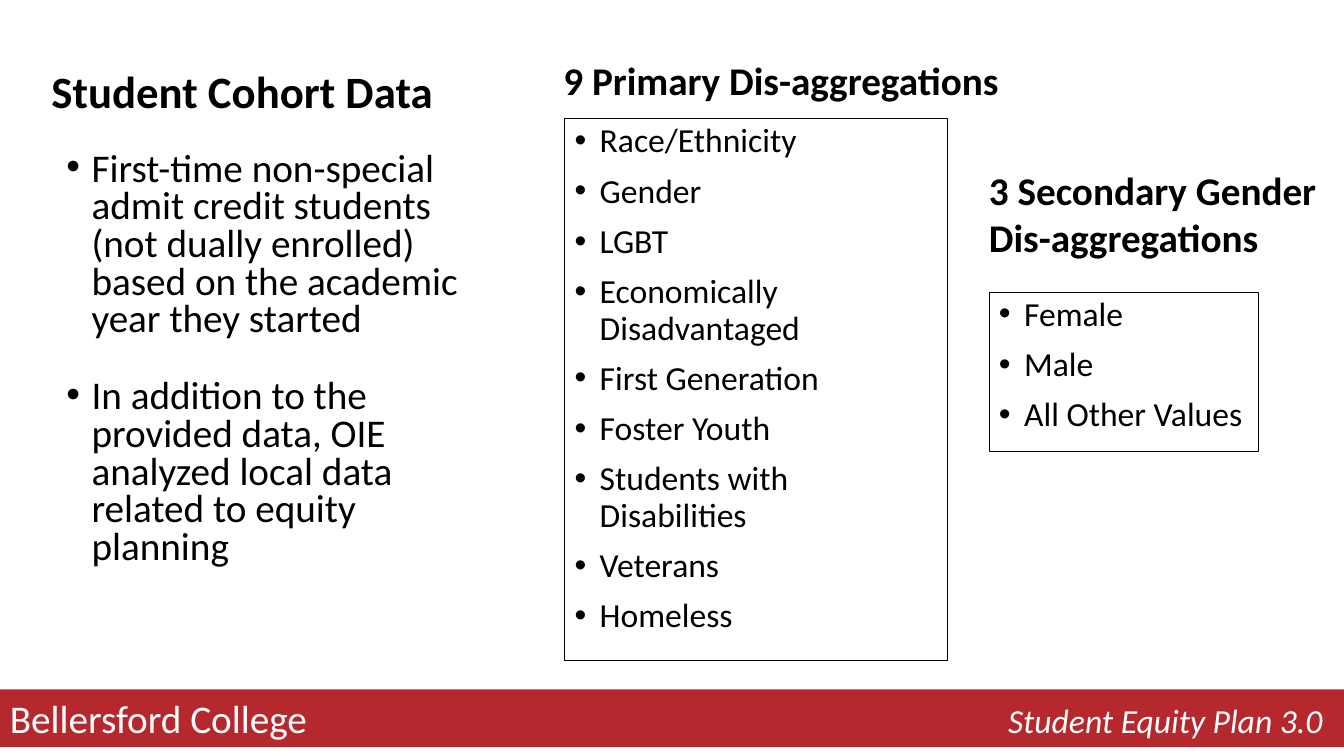
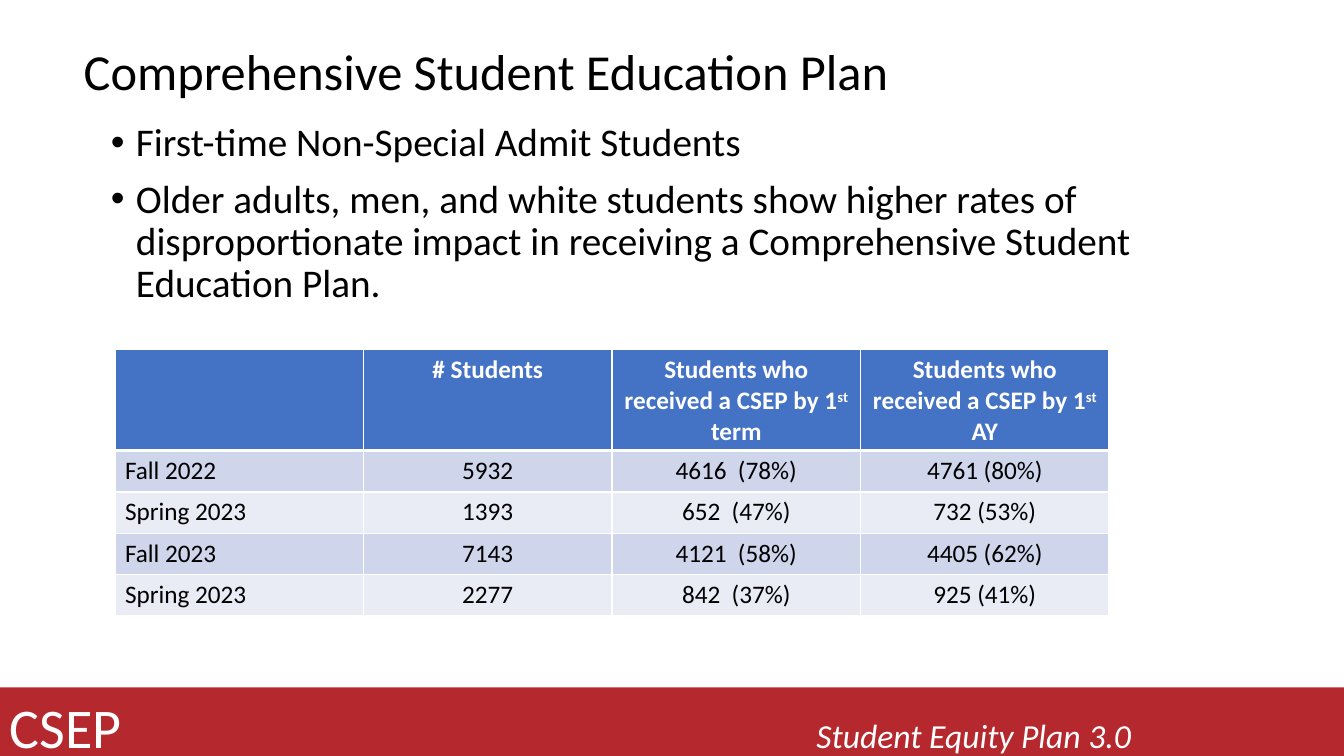
from lxml.etree import SubElement
from pptx import Presentation
from pptx.dml.color import RGBColor
from pptx.enum.shapes import MSO_SHAPE as Shape
from pptx.enum.text import MSO_ANCHOR as Anchor, MSO_AUTO_SIZE as AutoSize, PP_ALIGN as Align
from pptx.oxml.ns import qn
from pptx.util import Inches, Pt

FONT = "Calibri"
BLACK = RGBColor(0x00, 0x00, 0x00)
WHITE = RGBColor(0xFF, 0xFF, 0xFF)
BAND_RED = RGBColor(0xB5, 0x29, 0x2E)
HEADER_BLUE = RGBColor(0x44, 0x72, 0xC4)
ROW_FILLS = (RGBColor(0xCF, 0xD5, 0xEA), RGBColor(0xE9, 0xEB, 0xF5))

SLIDE_WIDTH, SLIDE_HEIGHT = 13.33, 7.5
INSET = 0.1
TITLE_ONLY = 5
PLAN_NAME = "Student Equity Plan 3.0"

PRIMARY_GROUPS = (
    "Race/Ethnicity", "Gender", "LGBT", "Economically Disadvantaged",
    "First Generation", "Foster Youth", "Students with Disabilities",
    "Veterans", "Homeless",
)
SECONDARY_GROUPS = ("Female", "Male", "All Other Values")
COHORT_POINTS = (
    "First-time non-special admit credit students (not dually enrolled) "
    "based on the academic year they started",
    "In addition to the provided data, OIE analyzed local data related to "
    "equity planning",
)
PLAN_POINTS = (
    "First-time Non-Special Admit Students",
    "Older adults, men, and white students show higher rates of "
    "disproportionate impact in receiving a Comprehensive Student Education Plan.",
)
PLAN_HEADERS = (
    (),
    ("# Students",),
    ("Students who received a CSEP by 1", "st", " term"),
    ("Students who received a CSEP by 1", "st", " AY"),
)
PLAN_ROWS = (
    ("Fall 2022", "5932", "4616  (78%)", "4761 (80%)"),
    ("Spring 2023", "1393", "652  (47%)", "732 (53%)"),
    ("Fall 2023", "7143", "4121  (58%)", "4405 (62%)"),
    ("Spring 2023", "2277", "842  (37%)", "925 (41%)"),
)


def add_run(paragraph, text, size, color=BLACK, bold=False, italic=False):
    """Append one formatted run and return it."""
    run = paragraph.add_run()
    run.text = text
    font = run.font
    font.name, font.size, font.bold, font.italic = FONT, Pt(size), bold, italic
    font.color.rgb = color
    return run


def add_title(slide, box, text, size, bold=False, line_spacing=1.0):
    """Place and format the title placeholder."""
    title = slide.shapes.title
    title.left, title.top, title.width, title.height = map(Inches, box)
    frame = title.text_frame
    frame.auto_size = AutoSize.NONE
    frame.word_wrap = True
    frame.vertical_anchor = Anchor.MIDDLE
    paragraph = frame.paragraphs[0]
    paragraph.alignment = Align.LEFT
    paragraph.line_spacing = line_spacing
    add_run(paragraph, text, size, bold=bold)


def add_text_box(slide, box):
    """Add a wrapping text box and return its text frame."""
    frame = slide.shapes.add_textbox(*map(Inches, box)).text_frame
    frame.word_wrap = True
    return frame


def add_rectangle(slide, box):
    """Add a plain rectangle without shadow."""
    rectangle = slide.shapes.add_shape(Shape.RECTANGLE, *map(Inches, box))
    rectangle.shadow.inherit = False
    rectangle.text_frame.word_wrap = True
    return rectangle


def fill_bullets(frame, items, size, indent=0.25, line_spacing=0.9, gap=10):
    """Fill a text frame with bulleted paragraphs."""
    for index, item in enumerate(items):
        paragraph = frame.add_paragraph() if index else frame.paragraphs[0]
        paragraph.alignment = Align.LEFT
        paragraph.line_spacing = line_spacing
        paragraph.space_before = Pt(gap if index else 10)
        properties = paragraph._p.get_or_add_pPr()
        properties.set("marL", str(Inches(indent)))
        properties.set("indent", str(Inches(-0.25)))
        SubElement(properties, qn("a:buFont"), typeface="Arial")
        SubElement(properties, qn("a:buChar"), char="•")
        add_run(paragraph, item, size)


def add_boxed_list(slide, box, heading, heading_box, items):
    """Add a bold heading and an outlined bullet list."""
    frame = add_text_box(slide, heading_box)
    add_run(frame.paragraphs[0], heading, 28, bold=True)
    outline = add_rectangle(slide, box)
    outline.fill.background()
    outline.line.color.rgb = BLACK
    outline.line.width = Pt(0.75)
    outline.text_frame.vertical_anchor = Anchor.TOP
    fill_bullets(outline.text_frame, items, 24)


def add_footer(slide, top, height, label, label_size, plan_right):
    """Add the red band with a label and a right-aligned plan name."""
    band = add_rectangle(slide, (0, top, SLIDE_WIDTH, height))
    band.fill.solid()
    band.fill.fore_color.rgb = BAND_RED
    band.line.fill.background()
    band.text_frame.vertical_anchor = Anchor.MIDDLE
    paragraph = band.text_frame.paragraphs[0]
    paragraph.alignment = Align.LEFT
    tabs = SubElement(paragraph._p.get_or_add_pPr(), qn("a:tabLst"))
    SubElement(tabs, qn("a:tab"), pos=str(Inches(plan_right - INSET)), algn="r")
    add_run(paragraph, label + "\t", label_size, WHITE)
    add_run(paragraph, PLAN_NAME, 24, WHITE, italic=True)


def set_borders(cell, top, bottom):
    """Draw white cell borders, widths in points."""
    properties = cell._tc.get_or_add_tcPr()
    sides = (("a:lnL", 1), ("a:lnR", 1), ("a:lnT", top), ("a:lnB", bottom))
    for tag, width in sides:
        line = SubElement(properties, qn(tag), w=str(Pt(width)))
        SubElement(SubElement(line, qn("a:solidFill")), qn("a:srgbClr"), val=str(WHITE))


def format_cell(cell, fill, top=1, bottom=1, alignment=Align.CENTER):
    """Set a cell's borders and fill and return its paragraph."""
    set_borders(cell, top, bottom)
    cell.fill.solid()
    cell.fill.fore_color.rgb = fill
    paragraph = cell.text_frame.paragraphs[0]
    paragraph.alignment = alignment
    return paragraph


def add_plan_table(slide, left, top, width, header_height=1.0, row_height=0.41):
    """Add the table of students who received a plan."""
    height = header_height + row_height * len(PLAN_ROWS)
    table = slide.shapes.add_table(
        len(PLAN_ROWS) + 1, len(PLAN_HEADERS),
        *map(Inches, (left, top, width, height))).table
    for column in table.columns:
        column.width = Inches(width / len(PLAN_HEADERS))
    for index, row in enumerate(table.rows):
        row.height = Inches(row_height if index else header_height)
    for column, parts in enumerate(PLAN_HEADERS):
        paragraph = format_cell(table.cell(0, column), HEADER_BLUE, bottom=3)
        for part in parts:
            run = add_run(paragraph, part, 18, WHITE, bold=True)
            if part == "st":
                run.font._element.set("baseline", "30000")
    for row, values in enumerate(PLAN_ROWS, 1):
        for column, value in enumerate(values):
            paragraph = format_cell(
                table.cell(row, column), ROW_FILLS[(row - 1) % 2],
                top=3 if row == 1 else 1,
                alignment=Align.CENTER if column else Align.LEFT)
            add_run(paragraph, value, 18)


def build_cohort_slide(slide):
    """Build the slide on cohort data and its dis-aggregations."""
    add_title(slide, (0.41, 0.61, 4.89, 0.64), "Student Cohort Data", 32,
              bold=True, line_spacing=0.9)
    fill_bullets(add_text_box(slide, (0.56, 1.46, 4.23, 4.34)),
                 COHORT_POINTS, 28, line_spacing=0.8, gap=28)
    add_boxed_list(slide, (5.6, 1.18, 3.8, 5.37), "9 Primary Dis-aggregations",
                   (5.49, 0.51, 5.1, 0.57), PRIMARY_GROUPS)
    add_boxed_list(slide, (9.81, 2.9, 2.67, 1.58), "3 Secondary Gender Dis-aggregations",
                   (9.71, 1.6, 3.6, 1.04), SECONDARY_GROUPS)
    add_footer(slide, 6.84, 0.57, "Bellersford College", 28, 13.12)


def build_plan_slide(slide):
    """Build the slide on the student education plan."""
    add_title(slide, (0.73, 0.34, 8.33, 0.71), "Comprehensive Student Education Plan", 36)
    fill_bullets(add_text_box(slide, (0.5, 1.17, 11.69, 2)), PLAN_POINTS, 28, indent=0.75)
    add_plan_table(slide, 1.14, 3.47, 9.86)
    add_footer(slide, 6.82, 0.77, "CSEP", 40, 11.22)


def main():
    """Build and save the presentation."""
    presentation = Presentation()
    presentation.slide_width = Inches(SLIDE_WIDTH)
    presentation.slide_height = Inches(SLIDE_HEIGHT)
    layout = presentation.slide_layouts[TITLE_ONLY]
    for build in (build_cohort_slide, build_plan_slide):
        build(presentation.slides.add_slide(layout))
    presentation.save("out.pptx")


if __name__ == "__main__":
    main()
